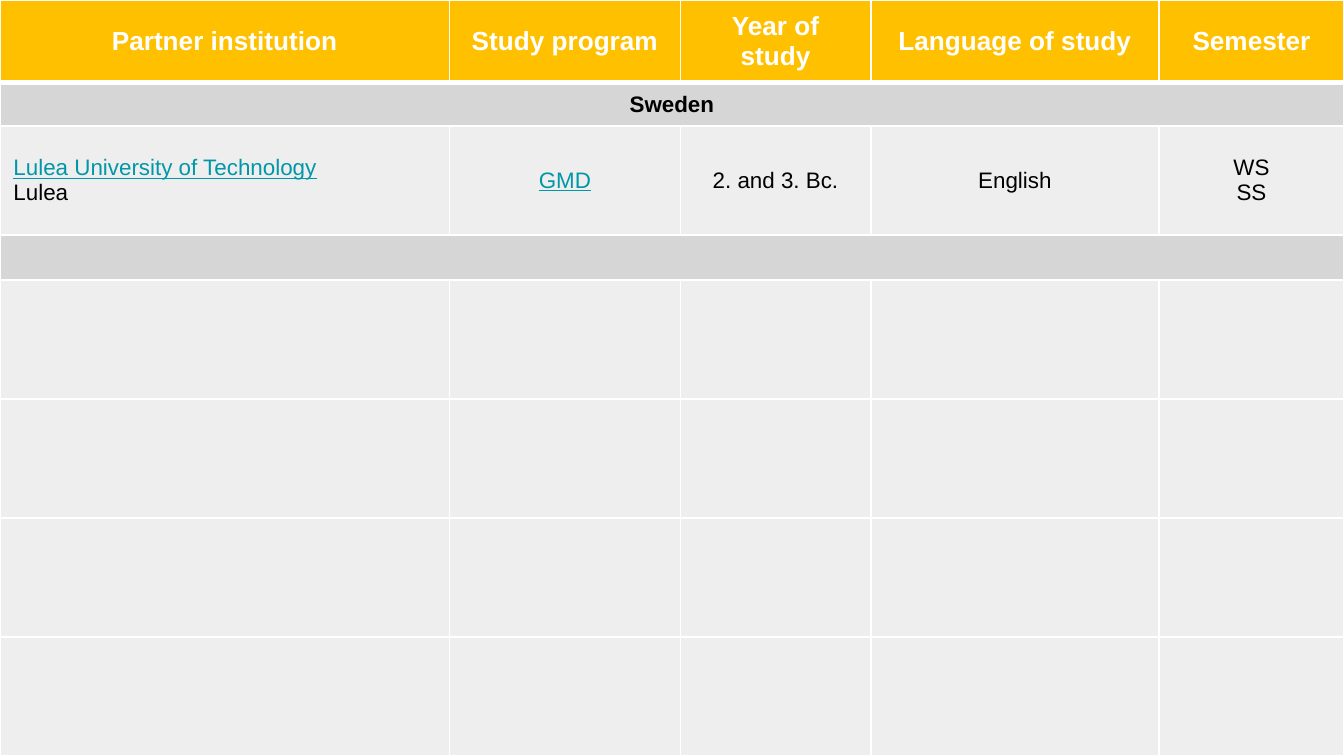
from lxml import etree
from pptx import Presentation
from pptx import util as u
from pptx.dml.color import RGBColor
from pptx.enum import text
from pptx.oxml.ns import qn

PX = 9525
SLIDE_WIDTH, SLIDE_HEIGHT = 960, 540

WHITE = RGBColor(0xFF, 0xFF, 0xFF)
BLACK = RGBColor(0x00, 0x00, 0x00)
AMBER = RGBColor(0xFF, 0xC0, 0x00)
BAND_GREY = RGBColor(0xD6, 0xD6, 0xD6)
ROW_GREY = RGBColor(0xEE, 0xEE, 0xEE)
LINK_TEAL = RGBColor(0x00, 0x97, 0xA7)

COLUMN_WIDTHS = [321, 165, 136, 206, 132]
EMPTY_ROWS = 4
ROW_HEIGHTS = [59, 31, 78, 32] + [85] * EMPTY_ROWS
HEADER_ROW = 0
BAND_ROWS = (1, 3)
ROWS = [
    ["Partner institution", "Study program", "Year of study", "Language of study", "Semester"],
    ["Sweden"],
    ["Lulea University of Technology\nLulea", "GMD", "2. and 3. Bc.", "English", "WS\nSS"],
]
LINKS = ("Lulea University of Technology", "GMD")


def set_borders(cell, bottom_points):
    properties = cell._tc.get_or_add_tcPr()
    widths = {"a:lnL": 1, "a:lnR": 1, "a:lnT": 1, "a:lnB": bottom_points}
    for position, (tag, points) in enumerate(widths.items()):
        line = etree.Element(qn(tag), w=str(u.Pt(points)))
        fill = etree.SubElement(line, qn("a:solidFill"))
        etree.SubElement(fill, qn("a:srgbClr"), val=str(WHITE))
        properties.insert(position, line)


def write_cell(cell, content, alignment, size, bold, color):
    cell.vertical_anchor = text.MSO_ANCHOR.MIDDLE
    cell.text_frame.text = content
    for paragraph in cell.text_frame.paragraphs:
        is_link = paragraph.text in LINKS
        paragraph.alignment = alignment
        font = paragraph.font
        font.name = "Arial"
        font.size = u.Pt(size)
        font.bold = bold
        font.underline = is_link
        font.color.rgb = LINK_TEAL if is_link else color
        if not paragraph.text:
            etree.SubElement(paragraph._p, qn("a:endParaRPr"), sz=str(size * 100))


def add_partner_table(slide, left, top, width, height):
    frame = slide.shapes.add_table(
        len(ROW_HEIGHTS), len(COLUMN_WIDTHS), left * PX, top * PX, width * PX, height * PX
    )
    table = frame.table
    table.first_row = False
    table.horz_banding = False
    for column, column_width in zip(table.columns, COLUMN_WIDTHS):
        column.width = column_width * PX
    for row_index, row_height in enumerate(ROW_HEIGHTS):
        table.rows[row_index].height = row_height * PX
        is_header = row_index == HEADER_ROW
        is_band = row_index in BAND_ROWS
        contents = ROWS[row_index] if row_index < len(ROWS) else []
        for column_index in range(len(COLUMN_WIDTHS)):
            cell = table.cell(row_index, column_index)
            content = contents[column_index] if column_index < len(contents) else ""
            is_institution = column_index == 0 and not (is_header or is_band)
            write_cell(
                cell,
                content,
                text.PP_ALIGN.LEFT if is_institution else text.PP_ALIGN.CENTER,
                14 if is_header else 12,
                is_header or is_band,
                WHITE if is_header else BLACK,
            )
            cell.fill.solid()
            cell.fill.fore_color.rgb = AMBER if is_header else BAND_GREY if is_band else ROW_GREY
            set_borders(cell, 3 if is_header else 1)
        if is_band:
            table.cell(row_index, 0).merge(table.cell(row_index, len(COLUMN_WIDTHS) - 1))


def main():
    presentation = Presentation()
    presentation.slide_width = SLIDE_WIDTH * PX
    presentation.slide_height = SLIDE_HEIGHT * PX
    slide = presentation.slides.add_slide(presentation.slide_layouts[6])
    add_partner_table(slide, 0, 0, SLIDE_WIDTH, SLIDE_HEIGHT)
    presentation.save("out.pptx")


if __name__ == "__main__":
    main()
